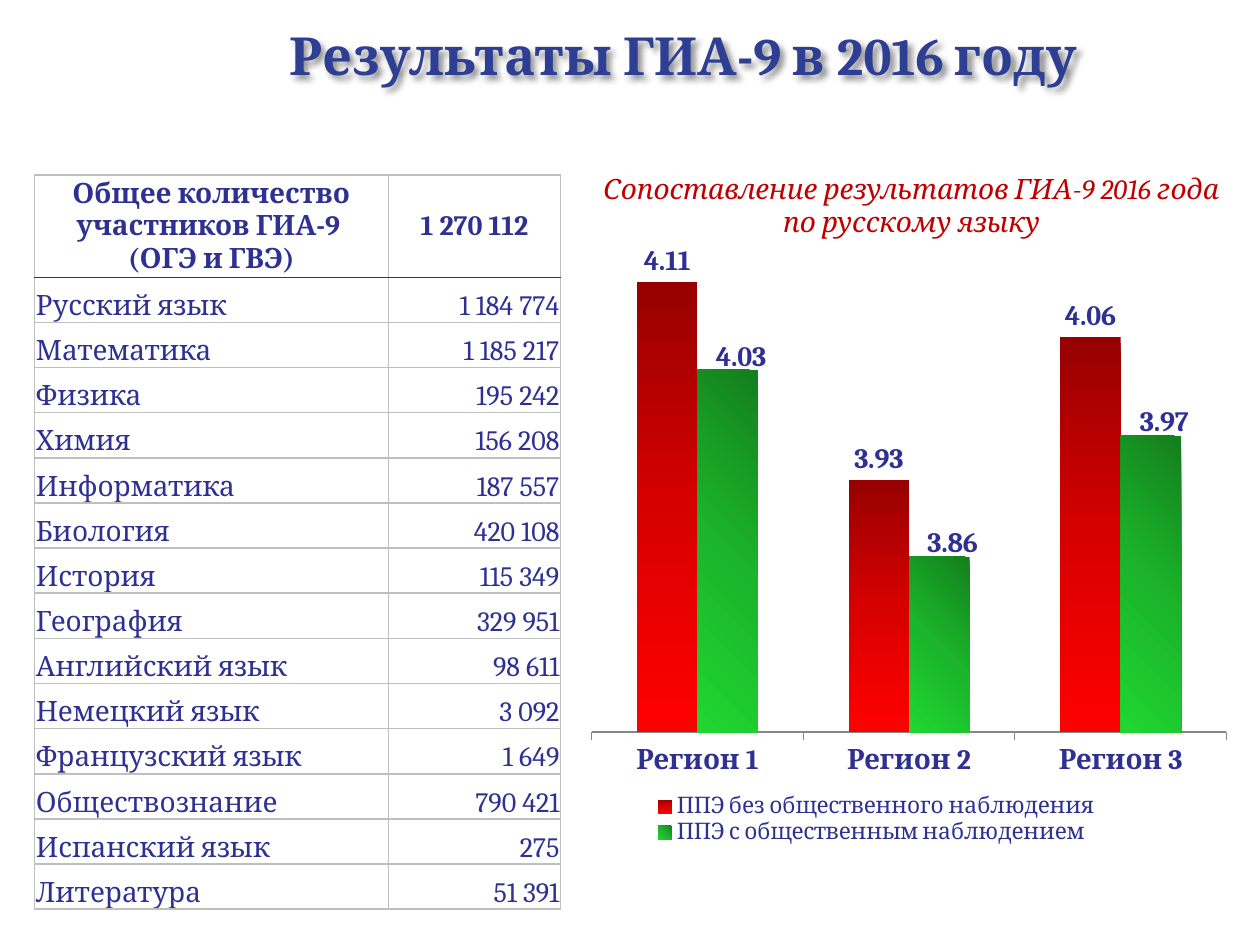
from lxml import etree
from pptx import Presentation
from pptx.chart.data import CategoryChartData
from pptx.dml.color import RGBColor
from pptx.enum.chart import XL_CHART_TYPE, XL_LABEL_POSITION, XL_LEGEND_POSITION
from pptx.enum.text import MSO_ANCHOR, PP_ALIGN
from pptx.oxml.ns import qn
from pptx.util import Pt

CENTER, LEFT, RIGHT = PP_ALIGN.CENTER, PP_ALIGN.LEFT, PP_ALIGN.RIGHT
MIDDLE, BOTTOM = MSO_ANCHOR.MIDDLE, MSO_ANCHOR.BOTTOM
COLUMNS = XL_CHART_TYPE.COLUMN_CLUSTERED
OUTSIDE_END = XL_LABEL_POSITION.OUTSIDE_END
LEGEND_RIGHT = XL_LEGEND_POSITION.RIGHT

NAVY, RED, GREY, WHITE = "2E3192", "C00000", "BFBFBF", "FFFFFF"
TITLE_FORMAT = {"name": "Cambria", "size": Pt(30), "bold": True}
BOLD_FORMAT = {"name": "Cambria", "size": Pt(16), "bold": True}
PLAIN_FORMAT = {"name": "Cambria", "size": Pt(16), "bold": False}
CAPTION_FORMAT = {"name": "Cambria", "size": Pt(16), "italic": True}
LEGEND_FORMAT = {"name": "Cambria", "size": Pt(13), "bold": False}

TOTAL = ("Общее количество участников ГИА-9 \n(ОГЭ и ГВЭ)", "1 270 112")
SUBJECTS = [
    ("Русский язык", "1 184 774"),
    ("Математика", "1 185 217"),
    ("Физика", "195 242"),
    ("Химия", "156 208"),
    ("Информатика", "187 557"),
    ("Биология", "420 108"),
    ("История", "115 349"),
    ("География", "329 951"),
    ("Английский язык", "98 611"),
    ("Немецкий язык", "3 092"),
    ("Французский язык", "1 649"),
    ("Обществознание", "790 421"),
    ("Испанский язык", "275"),
    ("Литература", "51 391"),
]
REGIONS = ["Регион 1", "Регион 2", "Регион 3"]
SCORES = [
    ("ППЭ без общественного наблюдения", (4.11, 3.93, 4.06), ("970000", "D70000", "FF0000"), 90),
    ("ППЭ с общественным наблюдением", (4.03, 3.86, 3.97), ("137F1D", "1BB42A", "20D631"), 135),
]


def rgb(color):
    """Turn a hex string into a colour."""
    return RGBColor.from_string(color)


def style_font(font, values, color):
    """Apply a dict of format values and a colour to a font."""
    for attribute, value in values.items():
        setattr(font, attribute, value)
    font.color.rgb = rgb(color)


def add_node(parent, tag, **attributes):
    """Append an XML child with the given attributes."""
    node = etree.SubElement(parent, qn(tag))
    for key, value in attributes.items():
        node.set(key, str(value))
    return node


def add_color(parent, color):
    """Append a hex colour element."""
    return add_node(parent, "a:srgbClr", val=color)


def write_lines(frame, text, values, color, align):
    """Write one formatted paragraph for each line of text."""
    frame.text = text
    for paragraph in frame.paragraphs:
        paragraph.alignment = align
        for run in paragraph.runs:
            style_font(run.font, values, color)


def add_text(slide, box, text, values, color):
    """Add a centred, wrapping text box."""
    textbox = slide.shapes.add_textbox(*map(Pt, box))
    textbox.text_frame.word_wrap = True
    write_lines(textbox.text_frame, text, values, color, CENTER)
    return textbox


def add_shadow(textbox):
    """Give a text box a soft shadow to the lower right."""
    effects = add_node(textbox._element.spPr, "a:effectLst")
    shadow = add_node(effects, "a:outerShdw", blurRad=Pt(4), dist=Pt(3),
                      dir=2700000, algn="tl", rotWithShape=0)
    add_node(add_color(shadow, "000000"), "a:alpha", val=43000)


def set_borders(cell, top, bottom):
    """Draw thin borders on all four sides of a cell."""
    properties = cell._tc.get_or_add_tcPr()
    for side, color in zip("LRTB", (GREY, GREY, top, bottom)):
        line = add_node(properties, f"a:ln{side}", w=Pt(1))
        add_color(add_node(line, "a:solidFill"), color)


def fill_cell(cell, text, values, align, anchor, top, bottom):
    """Write and format a table cell."""
    set_borders(cell, top, bottom)
    cell.fill.solid()
    cell.fill.fore_color.rgb = rgb(WHITE)
    cell.margin_left = cell.margin_right = cell.margin_top = Pt(0.75)
    cell.margin_bottom = Pt(0)
    cell.vertical_anchor = anchor
    write_lines(cell.text_frame, text, values, NAVY, align)


def add_participants_table(slide):
    """Add the table of participants by subject."""
    rows = [TOTAL, *SUBJECTS]
    table = slide.shapes.add_table(len(rows), 2, Pt(19.8), Pt(100.1), Pt(300.6), Pt(419.5)).table
    table.first_row = table.horz_banding = False
    for column, width in zip(table.columns, (202.1, 98.5)):
        column.width = Pt(width)
    for index, texts in enumerate(rows):
        header = index == 0
        table.rows[index].height = Pt(58.3 if header else 25.8)
        aligns = (CENTER, CENTER) if header else (LEFT, RIGHT)
        for column, (text, align) in enumerate(zip(texts, aligns)):
            fill_cell(table.cell(index, column), text,
                      BOLD_FORMAT if header else PLAIN_FORMAT, align,
                      MIDDLE if header else BOTTOM,
                      RED if index == 1 else GREY, RED if header else GREY)


def set_layout(parent, index, **values):
    """Place a chart part by hand, at the given child index."""
    for old in parent.findall(qn("c:layout")):
        parent.remove(old)
    layout = etree.Element(qn("c:layout"))
    manual = add_node(layout, "c:manualLayout")
    for tag, value in values.items():
        add_node(manual, f"c:{tag}", val=value)
    parent.insert(index, layout)


def set_gradient(series, colors, angle):
    """Fill a series with evenly spaced gradient colours."""
    gradient = add_node(series._element.get_or_add_spPr(), "a:gradFill", rotWithShape=1)
    stops = add_node(gradient, "a:gsLst")
    for index, color in enumerate(colors):
        position = 100000 * index // (len(colors) - 1)
        add_color(add_node(stops, "a:gs", pos=position), color)
    add_node(gradient, "a:lin", ang=angle * 60000, scaled=0)


def label_series(series):
    """Show bold values above the columns."""
    labels = series.data_labels
    labels.show_value = True
    labels.number_format, labels.number_format_is_linked = "0.00", False
    labels.position = OUTSIDE_END
    style_font(labels.font, BOLD_FORMAT, NAVY)


def shift_labels(series):
    """Move every value label of a series slightly right and down."""
    for index in range(len(REGIONS)):
        label = series.points[index].data_label
        style_font(label.font, BOLD_FORMAT, NAVY)
        label.position = OUTSIDE_END
        set_layout(label._dLbl, 1, x=0.02, y=0.01)


def add_scores_chart(slide):
    """Add the column chart of scores by region."""
    data = CategoryChartData(number_format="0.00")
    data.categories = REGIONS
    for name, values, _, _ in SCORES:
        data.add_series(name, values)
    chart = slide.shapes.add_chart(COLUMNS, Pt(337.7), Pt(105.8), Pt(382.3), Pt(434.2), data).chart
    style_font(chart.font, {"name": "Calibri", "size": Pt(10)}, "000000")
    chart.has_title = False
    plot = chart.plots[0]
    plot.gap_width, plot.overlap, plot.vary_by_categories = 150, 0, False
    for series, (_, _, colors, angle) in zip(plot.series, SCORES):
        set_gradient(series, colors, angle)
        label_series(series)
    shift_labels(plot.series[1])
    scale = chart.value_axis
    scale.minimum_scale, scale.maximum_scale = 3.7, 4.15
    scale.has_major_gridlines = scale.visible = False
    style_font(chart.category_axis.tick_labels.font, BOLD_FORMAT, NAVY)
    chart.category_axis.format.line.color.rgb = rgb("868686")
    chart.has_legend = True
    chart.legend.position = LEGEND_RIGHT
    chart.legend.include_in_layout = False
    style_font(chart.legend.font, LEGEND_FORMAT, NAVY)
    set_layout(chart.legend._element, 1, xMode="edge", yMode="edge", x=0.08, y=0.8, w=0.69, h=0.07)
    set_layout(chart._chartSpace.chart.plotArea, 0, layoutTarget="inner", xMode="edge",
               yMode="edge", x=0, y=0.07, w=0.95, h=0.65)


def main():
    """Build and save the slide."""
    deck = Presentation()
    deck.slide_width, deck.slide_height = Pt(720), Pt(540)
    slide = deck.slides.add_slide(deck.slide_layouts[6])
    title = add_text(slide, (127.4, 9.4, 532.8, 43.9), "Результаты ГИА-9 в 2016 году ",
                     TITLE_FORMAT, "2D3E93")
    add_shadow(title)
    add_participants_table(slide)
    add_scores_chart(slide)
    add_text(slide, (321.1, 94.3, 399.6, 46.1),
             "Сопоставление результатов ГИА-9 2016 года\nпо русскому языку", CAPTION_FORMAT, RED)
    deck.save("out.pptx")


if __name__ == "__main__":
    main()
